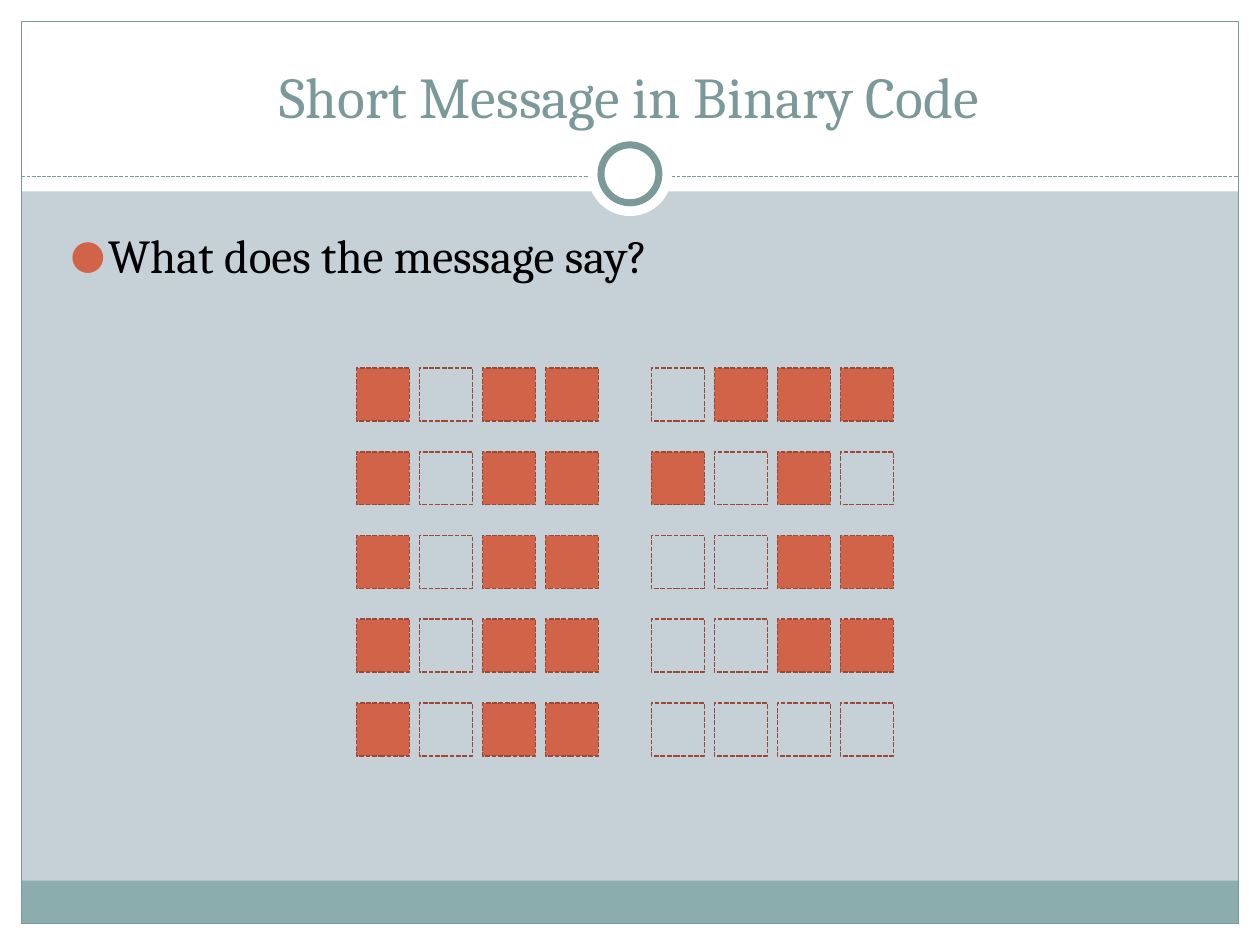
from lxml.etree import SubElement
from pptx import Presentation
from pptx.dml.color import RGBColor
from pptx.enum.dml import MSO_LINE
from pptx.enum.shapes import MSO_CONNECTOR, MSO_SHAPE
from pptx.enum.text import MSO_ANCHOR, PP_ALIGN
from pptx.oxml.ns import qn
from pptx.util import Inches, Pt

FONT = "Cambria"
WHITE, TEAL, BAND, ORANGE, RUST = "FFFFFF", "7C999A", "8CADAE", "D16349", "9B4936"
MESSAGE = ["1011 0111", "1011 1010", "1011 0011", "1011 0011", "1011 0000"]


def colour(value):
    return RGBColor.from_string(value)


def add_box(shapes, kind, box, fill=None, line=None, width=0.75, dash=None):
    shape = shapes.add_shape(kind, *map(Inches, box))
    shape.shadow.inherit = False
    if fill:
        shape.fill.solid()
        shape.fill.fore_color.rgb = colour(fill)
    else:
        shape.fill.background()
    if line:
        shape.line.color.rgb = colour(line)
        shape.line.width = Pt(width)
        shape.line.dash_style = dash
    else:
        shape.line.fill.background()
    return shape


def add_frame(page, box):
    left, top, width, height = box
    margin = 0.17
    right, bottom = left + width, top + height
    inner = width - 2 * margin
    panels = [
        ((left, bottom - margin, width, margin), WHITE),
        ((left, top, width, 1.52), WHITE),
        ((left, top, margin, height), WHITE),
        ((right - margin, top, margin, height), WHITE),
        ((left + margin, bottom - 0.51, inner, 0.34), BAND),
    ]
    for panel, fill in panels:
        add_box(page.shapes, MSO_SHAPE.RECTANGLE, panel, fill)
    border = (left + margin, top + margin, inner, height - 2 * margin)
    add_box(page.shapes, MSO_SHAPE.RECTANGLE, border, line=TEAL)

    rule_y = Inches(top + 1.4)
    rule = page.shapes.add_connector(
        MSO_CONNECTOR.STRAIGHT, Inches(left + margin), rule_y, Inches(right - margin), rule_y
    )
    rule.line.color.rgb = colour(TEAL)
    rule.line.width = Pt(0.75)
    rule.line.dash_style = MSO_LINE.SQUARE_DOT
    SubElement(rule.element.spPr, qn("a:effectLst"))

    centre_x, centre_y = left + width / 2, top + 1.38
    for size, line in ((0.67, None), (0.46, TEAL)):
        circle = (centre_x - size / 2, centre_y - size / 2, size, size)
        add_box(page.shapes, MSO_SHAPE.OVAL, circle, WHITE, line, 4)


def set_text(shape, text, size, value, anchor, align):
    frame = shape.text_frame
    frame.word_wrap = True
    frame.vertical_anchor = anchor
    para = frame.paragraphs[0]
    para.text = text
    para.alignment = align
    para.font.name = FONT
    para.font.size = Pt(size)
    para.font.color.rgb = colour(value)
    return para


def add_title(page, box, text):
    title = page.shapes.title
    title.left, title.top, title.width, title.height = map(Inches, box)
    set_text(title, text, 33, TEAL, MSO_ANCHOR.BOTTOM, PP_ALIGN.CENTER)
    title.element.getparent().append(title.element)


def add_question(page, box, text):
    question = page.shapes.add_textbox(*map(Inches, box))
    para = set_text(question, text, 27, "000000", MSO_ANCHOR.TOP, PP_ALIGN.LEFT)
    props = para._p.get_or_add_pPr()
    props.set("marL", str(Inches(0.3)))
    props.set("indent", str(Inches(-0.3)))
    bullet_colour = SubElement(props, qn("a:buClr"))
    SubElement(bullet_colour, qn("a:srgbClr"), val=ORANGE)
    SubElement(props, qn("a:buSzPct"), val="85000")
    SubElement(props, qn("a:buFont"), typeface=FONT)
    SubElement(props, qn("a:buChar"), char="●")
    props.append(props.find(qn("a:defRPr")))


def add_bits(page, box, rows):
    left, top, width, height = box
    size, step = 0.42, 0.5
    row_step = (height - size) / (len(rows) - 1)
    for row, code in enumerate(rows):
        halves = code.split()
        half_step = (width - size - step * (len(halves[0]) - 1)) / (len(halves) - 1)
        for half, bits in enumerate(halves):
            group = page.shapes.add_group_shape()
            for column, bit in enumerate(bits):
                square = (left + half * half_step + column * step, top + row * row_step, size, size)
                fill = ORANGE if bit == "1" else None
                add_box(group.shapes, MSO_SHAPE.RECTANGLE, square, fill, RUST, 0.9, MSO_LINE.SQUARE_DOT)


def main():
    deck = Presentation()
    deck.slide_width, deck.slide_height = Inches(10), Inches(7.5)
    page = deck.slides.add_slide(deck.slide_layouts[5])
    page.background.fill.solid()
    page.background.fill.fore_color.rgb = colour("C5D1D7")
    add_frame(page, (0, 0, 10, 7.5))
    add_title(page, (0.33, 0.25, 9.33, 0.83), "Short Message in Binary Code")
    add_question(page, (0.46, 1.75, 9, 0.83), "What does the message say?")
    add_bits(page, (2.83, 2.92, 4.26, 3.08), MESSAGE)
    deck.save("out.pptx")


if __name__ == "__main__":
    main()
